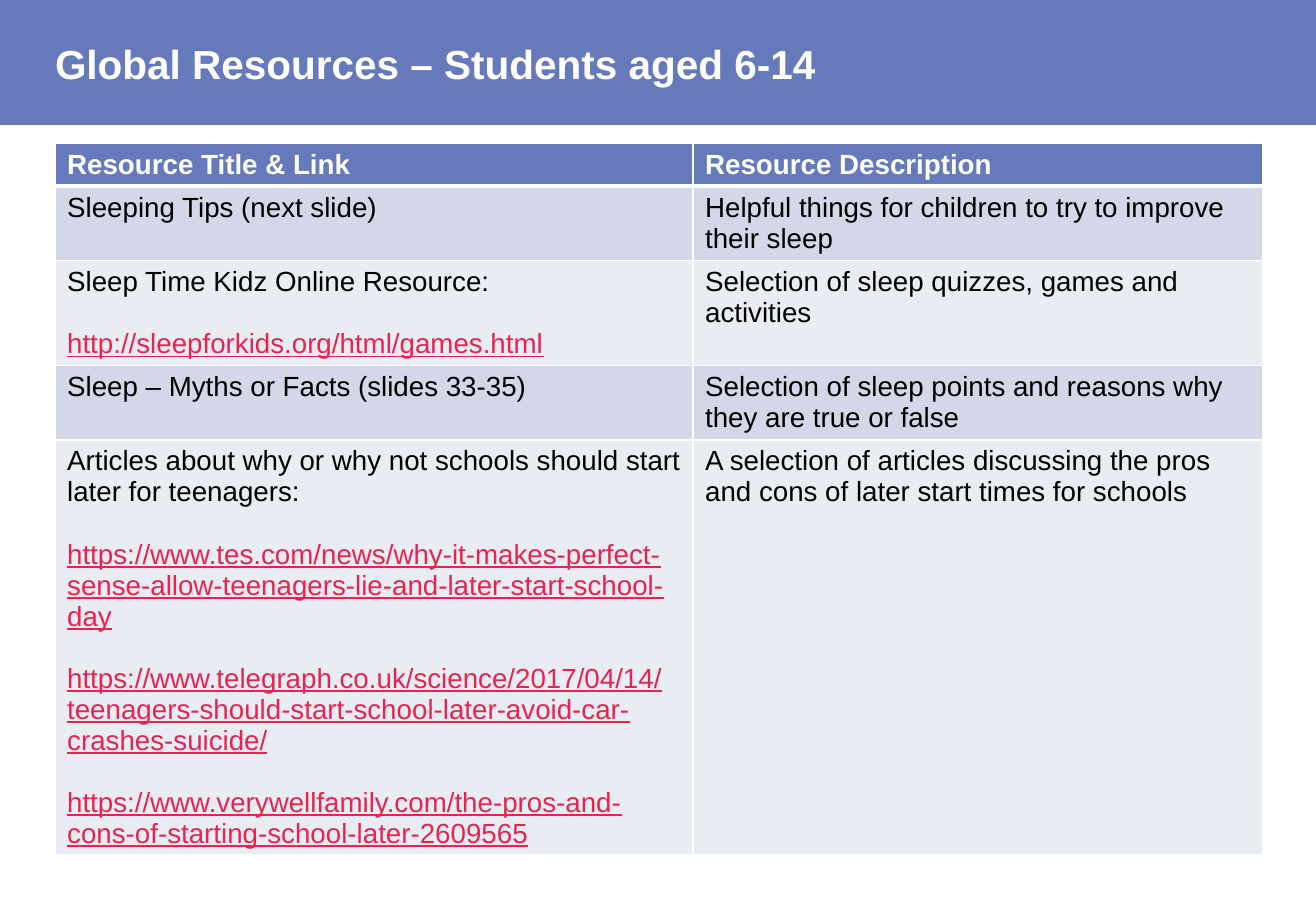
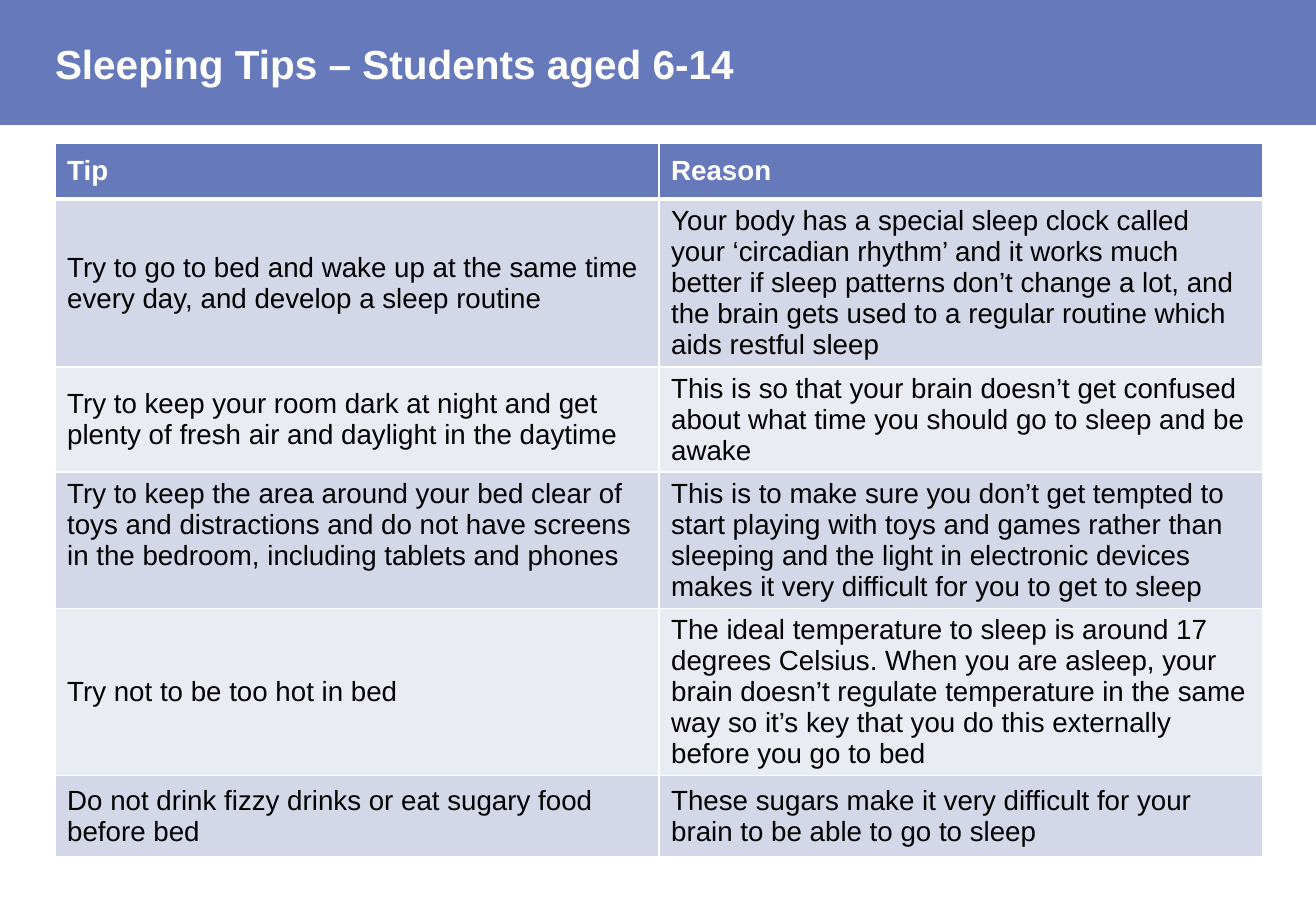
"""Build two slides of sleep resources and sleeping tips for students aged 6-14."""
from dataclasses import dataclass

from lxml import etree
from pptx import Presentation
from pptx.dml.color import RGBColor
from pptx.enum.shapes import MSO_SHAPE
from pptx.enum.text import MSO_ANCHOR, MSO_AUTO_SIZE, PP_ALIGN
from pptx.oxml.ns import qn
from pptx.util import Pt

PX = 914400 / 121.5
RECTANGLE = MSO_SHAPE.RECTANGLE
TOP, MIDDLE = MSO_ANCHOR.TOP, MSO_ANCHOR.MIDDLE
NO_AUTOFIT = MSO_AUTO_SIZE.NONE
LEFT = PP_ALIGN.LEFT
TITLE_ONLY = 5


@dataclass(frozen=True)
class Theme:
    font: str = "Arial"
    blue: str = "6679BA"
    white: str = "FFFFFF"
    black: str = "000000"
    link: str = "E6244F"
    bands: tuple = ("EAECF3", "D3D7E7")
    title_size: float = 24
    body_size: float = 16.4
    link_gap: float = 18.4
    border: float = 1
    header_border: float = 3


THEME = Theme()

SLIDES = [
    {
        "title": "Global Resources – Students aged 6-14",
        "columns": [638, 570],
        "heights": [43, 74, 105, 74, 415],
        "anchor": TOP,
        "top_cells": [],
        "rows": [
            [["Resource Title & Link"], ["Resource Description"]],
            [["Sleeping Tips (next slide)"],
             ["Helpful things for children to try to improve their sleep"]],
            [["Sleep Time Kidz Online Resource:",
              "http://sleepforkids.org/html/games.html"],
             ["Selection of sleep quizzes, games and activities"]],
            [["Sleep – Myths or Facts (slides 33-35)"],
             ["Selection of sleep points and reasons why they are true or false"]],
            [["Articles about why or why not schools should start later for teenagers:",
              "https://www.tes.com/news/why-it-makes-perfect-sense-allow-teenagers-lie-"
              "and-later-start-school-day",
              "https://www.telegraph.co.uk/science/2017/04/14/"
              "teenagers-should-start-school-later-avoid-car-crashes-suicide/",
              "https://www.verywellfamily.com/"
              "the-pros-and-cons-of-starting-school-later-2609565"],
             ["A selection of articles discussing the pros and cons of later start "
              "times for schools"]],
        ],
    },
    {
        "title": "Sleeping Tips – Students aged 6-14",
        "columns": [604, 604],
        "heights": [56, 168, 105, 136, 167, 81],
        "anchor": MIDDLE,
        "top_cells": [(3, 0)],
        "rows": [
            [["Tip"], ["Reason"]],
            [["Try to go to bed and wake up at the same time every day, and develop a "
              "sleep routine"],
             ["Your body has a special sleep clock called your ‘circadian rhythm’ and it "
              "works much better if sleep patterns don’t change a lot, and the brain gets "
              "used to a regular routine which aids restful sleep"]],
            [["Try to keep your room dark at night and get plenty of fresh air and "
              "daylight in the daytime"],
             ["This is so that your brain doesn’t get confused about what time you should "
              "go to sleep and be awake"]],
            [["Try to keep the area around your bed clear of toys and distractions and do "
              "not have screens in the bedroom, including tablets and phones"],
             ["This is to make sure you don’t get tempted to start playing with toys and "
              "games rather than sleeping and the light in electronic devices makes it "
              "very difficult for you to get to sleep"]],
            [["Try not to be too hot in bed"],
             ["The ideal temperature to sleep is around 17 degrees Celsius. When you are "
              "asleep, your brain doesn’t regulate temperature in the same way so it’s key "
              "that you do this externally before you go to bed"]],
            [["Do not drink fizzy drinks or eat sugary food before bed"],
             ["These sugars make it very difficult for your brain to be able to go to "
              "sleep"]],
        ],
    },
]


def add_run(paragraph, text, size, color, bold=False, underline=False):
    run = paragraph.add_run()
    run.text = text
    font = run.font
    font.name, font.size = THEME.font, Pt(size)
    font.bold, font.underline = bold, underline
    font.color.rgb = RGBColor.from_string(color)


def set_borders(cell, row_index):
    properties = cell._tc.get_or_add_tcPr()
    thick_side = {0: "lnB", 1: "lnT"}.get(row_index)
    for position, side in enumerate(("lnL", "lnR", "lnT", "lnB")):
        width = THEME.header_border if side == thick_side else THEME.border
        line = etree.Element(qn(f"a:{side}"), w=str(Pt(width)))
        fill = etree.SubElement(line, qn("a:solidFill"))
        etree.SubElement(fill, qn("a:srgbClr"), val=THEME.white)
        properties.insert(position, line)


presentation = Presentation()
presentation.slide_width, presentation.slide_height = round(1316 * PX), round(911 * PX)
layout = presentation.slide_layouts[TITLE_ONLY]

for slide_index, content in enumerate(SLIDES):
    slide = presentation.slides.add_slide(layout)
    if slide_index == 0:
        band = slide.shapes.add_shape(RECTANGLE, 0, 0, presentation.slide_width, round(125 * PX))
        band.shadow.inherit = False
        band.fill.solid()
        band.fill.fore_color.rgb = RGBColor.from_string(THEME.blue)
        band.line.fill.background()
        layout.shapes.element.insert(2, band.element)

    title = slide.shapes.title
    title.left, title.top, title.width, title.height = (
        round(length * PX) for length in (55, 15, 1208, 96))
    frame = title.text_frame
    frame.margin_left = frame.margin_top = frame.margin_right = frame.margin_bottom = 0
    frame.vertical_anchor, frame.auto_size, frame.word_wrap = MIDDLE, NO_AUTOFIT, True
    frame.paragraphs[0].alignment = LEFT
    add_run(frame.paragraphs[0], content["title"], THEME.title_size, THEME.white, bold=True)

    rows, columns, heights = content["rows"], content["columns"], content["heights"]
    table = slide.shapes.add_table(
        len(rows), len(columns), round(55 * PX), round(143 * PX),
        round(sum(columns) * PX), round(sum(heights) * PX)).table
    table.horz_banding = False
    for column, width in zip(table.columns, columns):
        column.width = round(width * PX)
    for row_index, row in enumerate(rows):
        table.rows[row_index].height = round(heights[row_index] * PX)
        header = row_index == 0
        fill_color = THEME.blue if header else THEME.bands[row_index % 2]
        for column_index, texts in enumerate(row):
            cell = table.cell(row_index, column_index)
            cell.fill.solid()
            cell.fill.fore_color.rgb = RGBColor.from_string(fill_color)
            set_borders(cell, row_index)
            at_top = (row_index, column_index) in content["top_cells"]
            cell.vertical_anchor = TOP if at_top else content["anchor"]
            for text_index, text in enumerate(texts):
                paragraphs = cell.text_frame
                paragraph = paragraphs.add_paragraph() if text_index else paragraphs.paragraphs[0]
                is_link = text.startswith("http")
                if is_link:
                    paragraph.space_before = Pt(THEME.link_gap)
                color = THEME.white if header else THEME.link if is_link else THEME.black
                add_run(paragraph, text, THEME.body_size, color, header, is_link)

presentation.save("out.pptx")
